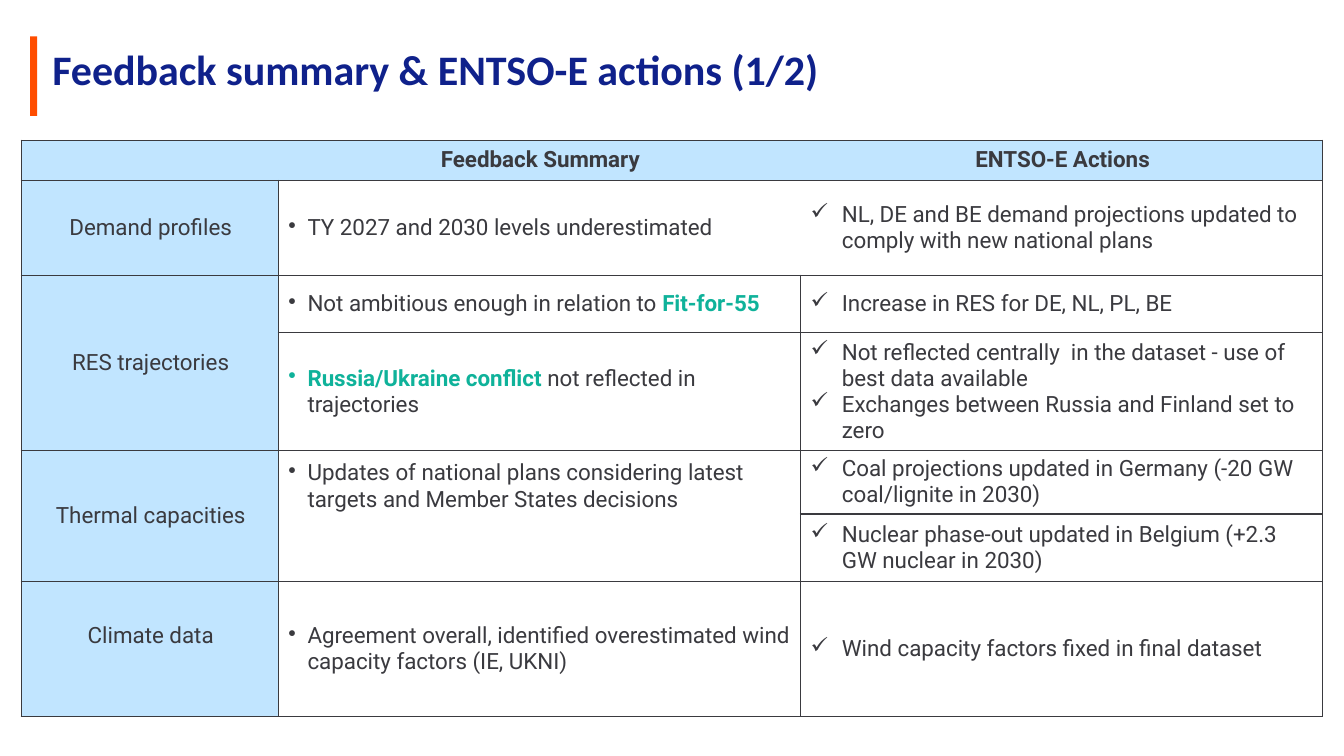
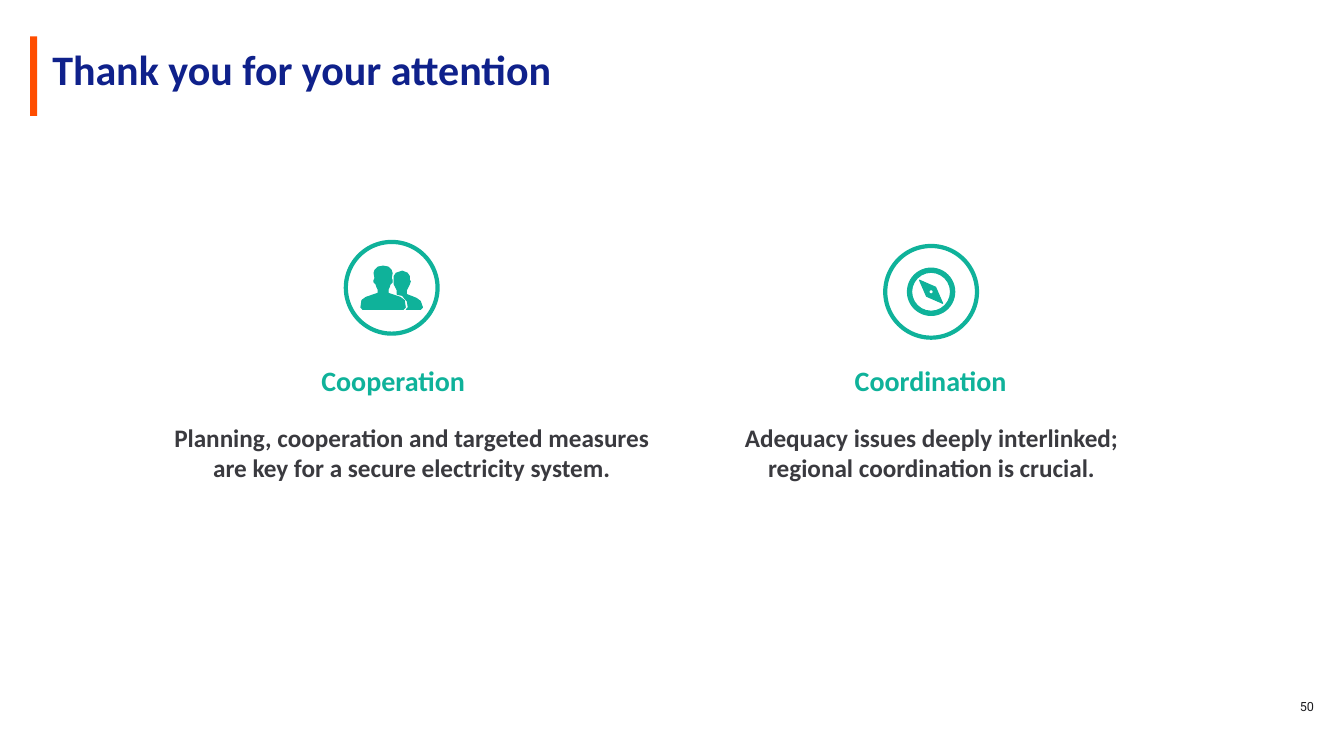
from lxml import etree
from pptx import Presentation, util as u
from pptx.dml.color import RGBColor
from pptx.enum import shapes, text
from pptx.oxml.ns import qn

COLORS = {"navy": "0F218B", "orange": "FF4D00", "teal": "0FB29A", "sky": "C1E5FF",
          "ink": "3A3A3F", "black": "1D1D20", "white": "FFFFFF"}
ALIGN = {"l": text.PP_ALIGN.LEFT, "c": text.PP_ALIGN.CENTER, "r": text.PP_ALIGN.RIGHT}
MIDDLE, TOP = text.MSO_ANCHOR.MIDDLE, text.MSO_ANCHOR.TOP

HEADERS = ["", "Feedback Summary", "ENTSO-E Actions"]
ROWS = [
    (0.94, "Demand profiles", "TY 2027 and 2030 levels underestimated",
     "NL, DE and BE demand projections updated to comply with new national plans"),
    (0.57, "RES trajectories", "Not ambitious enough in relation to *Fit-for-55*",
     "Increase in RES for DE, NL, PL, BE"),
    (1.14, None, "*Russia/Ukraine conflict* not reflected in trajectories",
     "Not reflected centrally  in the dataset - use of best data available\n"
     "Exchanges between Russia and Finland set to zero"),
    (0.62, "Thermal capacities",
     "Updates of national plans considering latest targets and Member States decisions",
     "Coal projections updated in Germany (-20 GW coal/lignite in 2030)"),
    (0.67, None, None, "Nuclear phase-out updated in Belgium (+2.3 GW nuclear in 2030)"),
    (1.34, "Climate data",
     "Agreement overall, identified overestimated wind capacity factors (IE, UKNI)",
     "Wind capacity factors fixed in final dataset"),
]
MERGES = [((2, 0), (3, 0)), ((4, 0), (5, 0)), ((4, 1), (5, 1))]
BULLETS = [None, ("•", 0.19), ("✓", 0.31)]

FRONT_HALF = [(0, 0), (.05, .01), (.08, .04), (.09, .07), (.08, .12), (.09, .14),
              (.09, .16), (.07, .18), (.06, .21), (.05, .23), (.05, .27), (.11, .29),
              (.17, .31), (.21, .34), (.22, .41), (.2, .43)]
FRONT = ([(.22 + x, y) for x, y in FRONT_HALF]
         + [(.22 - x, y) for x, y in reversed(FRONT_HALF)])
BACK = [(.41, .05), (.46, .07), (.48, .1), (.48, .14), (.49, .15), (.48, .18), (.47, .2),
        (.45, .24), (.45, .28), (.5, .3), (.55, .32), (.59, .35), (.61, .41), (.59, .43),
        (.45, .43), (.47, .41), (.46, .35), (.41, .29), (.36, .28), (.36, .24), (.34, .2),
        (.33, .18), (.33, .15), (.33, .1), (.35, .07)]
NEEDLE = [(.12, .12), (.28, .19), (.35, .35), (.19, .28)]


def rgb(name):
    """Return the named colour."""
    return RGBColor.from_string(COLORS[name])


def write(tf, content, size=16, font="Roboto", color="ink", bold=False, align="l",
          anchor=MIDDLE, spacing=None, bullet=None):
    """Fill a text frame; newlines split paragraphs and asterisks mark highlights."""
    tf.word_wrap = True
    tf.vertical_anchor = anchor
    for i, line in enumerate(content.split("\n")):
        p = tf.add_paragraph() if i else tf.paragraphs[0]
        p.alignment = ALIGN[align]
        if spacing:
            p.line_spacing = u.Pt(spacing)
        if bullet:
            char, indent = bullet
            pPr = p._p.get_or_add_pPr()
            pPr.set("marL", str(u.Inches(indent)))
            pPr.set("indent", str(-u.Inches(indent)))
            etree.SubElement(pPr, qn("a:buChar"), char=char)
        for j, part in enumerate(line.split("*")):
            if not part:
                continue
            r = p.add_run()
            r.text = part
            r.font.size, r.font.name = u.Pt(size), font
            r.font.bold = bold or j % 2 == 1
            r.font.color.rgb = rgb("teal" if j % 2 else color)


def add_text(s, box, content, **fmt):
    """Add a text box at the given box in inches."""
    sp = s.shapes.add_textbox(*map(u.Inches, box))
    write(sp.text_frame, content, **fmt)


def paint(sp, fill=None, line=None, width=0.75):
    """Set the fill and outline of a shape."""
    sp.shadow.inherit = False
    if fill:
        sp.fill.solid()
        sp.fill.fore_color.rgb = rgb(fill)
    else:
        sp.fill.background()
    if line:
        sp.line.color.rgb = rgb(line)
        sp.line.width = u.Pt(width)
    else:
        sp.line.fill.background()
    return sp


def add_preset(parent, kind, box, **style):
    """Add a painted preset shape."""
    return paint(parent.shapes.add_shape(kind, *map(u.Inches, box)), **style)


def add_outline(parent, left, top, points):
    """Add a closed teal outline through points relative to a corner."""
    pts = [(u.Inches(left + x), u.Inches(top + y)) for x, y in points]
    fb = parent.shapes.build_freeform(*pts[0])
    fb.add_line_segments(pts[1:], close=True)
    paint(fb.convert_to_shape(), fill="teal", line="teal")


def new_slide(prs, title, number):
    """Add a blank slide with accent bar, title and page number."""
    s = prs.slides.add_slide(prs.slide_layouts[6])
    add_text(s, (6.75, 6.82, 6.38, 0.4), number, size=9, color="black", align="r", spacing=9)
    add_preset(s, shapes.MSO_SHAPE.RECTANGLE, (0.3, 0.36, 0.07, 0.79), fill="orange")
    add_text(s, (0.42, 0.51, 12.71, 0.39), title, size=30, font="Calibri", color="navy",
             bold=True, spacing=32)
    return s


def set_borders(cell, drawn):
    """Draw or clear each side of a cell."""
    tcPr = cell._tc.get_or_add_tcPr()
    for i, (side, visible) in enumerate(drawn.items()):
        ln = etree.Element(qn("a:ln" + side), w=str(u.Pt(1)))
        if visible:
            fill = etree.SubElement(ln, qn("a:solidFill"))
            etree.SubElement(fill, qn("a:srgbClr"), val=COLORS["ink"])
        else:
            etree.SubElement(ln, qn("a:noFill"))
        tcPr.insert(i, ln)


def add_feedback_table(s, left, top, widths):
    """Add the table of feedback topics and actions."""
    rows = [(0.37, *HEADERS)] + ROWS
    heights = [row[0] for row in rows]
    frame = s.shapes.add_table(len(rows), len(widths), *map(
        u.Inches, (left, top, sum(widths), sum(heights))))
    table = frame.table
    table.first_row = table.horz_banding = False
    for column, width in zip(table.columns, widths):
        column.width = u.Inches(width)
    for row, height in zip(table.rows, heights):
        row.height = u.Inches(height)
    for start, end in MERGES:
        table.cell(*start).merge(table.cell(*end))
    for r, (_, *contents) in enumerate(rows):
        for c, content in enumerate(contents):
            cell = table.cell(r, c)
            label = r == 0 or c == 0
            cell.fill.solid()
            cell.fill.fore_color.rgb = rgb("sky" if label else "white")
            cell.margin_right = u.Inches(0.08)
            set_borders(cell, {"L": r >= c, "R": c == 2 or r > c,
                               "T": not cell.is_spanned, "B": True})
            if content is not None:
                write(cell.text_frame, content, bold=r == 0, align="c" if label else "l",
                      bullet=None if label else BULLETS[c])
                cell.vertical_anchor = MIDDLE
    plans, climate = table.cell(4, 1), table.cell(6, 0)
    plans.vertical_anchor = TOP
    plans.margin_top, plans.margin_bottom = u.Inches(0.1), 0
    climate.margin_bottom = u.Inches(0.31)


def draw_people(g, left, top):
    """Draw two figures inside a ring."""
    for points in (BACK, FRONT):
        add_outline(g, left + 0.15, top + 0.24, points)


def draw_compass(g, left, top):
    """Draw a compass inside a ring."""
    x, y = left + 0.22, top + 0.22
    dial = add_preset(g, shapes.MSO_SHAPE.DONUT, (x, y, 0.47, 0.47), fill="teal", line="teal")
    dial.adjustments[0] = 0.09
    add_outline(g, x, y, NEEDLE)
    add_preset(g, shapes.MSO_SHAPE.OVAL, (x + 0.22, y + 0.22, 0.03, 0.03), fill="white")


def add_message(s, ring, draw_icon, heading, heading_left, body, body_left, body_width):
    """Add a ringed icon with a heading and a message below."""
    g = s.shapes.add_group_shape()
    draw_icon(g, *ring)
    add_preset(g, shapes.MSO_SHAPE.OVAL, (*ring, 0.91, 0.91), line="teal", width=3)
    add_text(s, (body_left, 3.66, body_width, 1.66), body, size=18, font="Calibri",
             bold=True, align="c")
    add_text(s, (heading_left, 3.56, 1.96, 0.44), heading, size=20, font="Calibri",
             color="teal", bold=True, align="c", anchor=TOP)


def main():
    """Build and save the presentation."""
    prs = Presentation()
    prs.slide_width, prs.slide_height = u.Inches(13.33), u.Inches(7.5)
    s = new_slide(prs, "Feedback summary & ENTSO-E actions (1/2)", "6")
    add_feedback_table(s, 0.21, 1.39, (2.55, 5.18, 5.18))
    s = new_slide(prs, "Thank you for your attention", "50")
    add_message(s, (3.43, 2.4), draw_people, "Cooperation", 2.92,
                "Planning, cooperation and targeted measures are key for a secure "
                "electricity system.", 1.5, 5.17)
    add_message(s, (8.78, 2.44), draw_compass, "Coordination", 8.25,
                "Adequacy issues deeply interlinked; regional coordination is crucial.",
                7.22, 4.04)
    prs.save("out.pptx")


if __name__ == "__main__":
    main()
